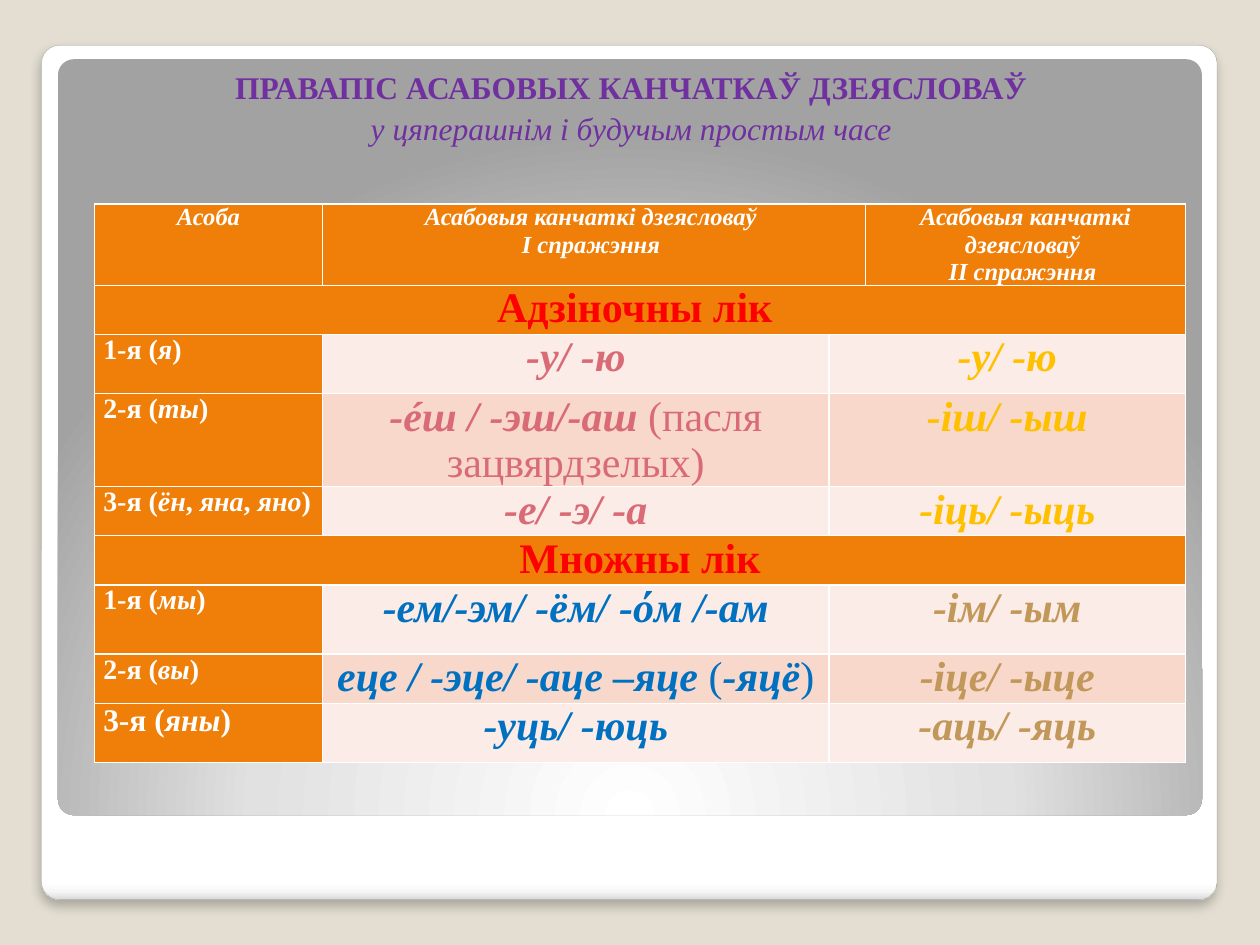
"""Build a slide with a table of Belarusian verb endings."""
from pptx import Presentation
from pptx import util as u
from pptx.dml.color import RGBColor
from pptx.enum import shapes, text
from pptx.oxml import parse_xml
from pptx.oxml.ns import nsdecls, qn

WIDE, HIGH = 10, 7.5
FONT = "Times New Roman"
HUES = {
    "page": "E3DED1", "edge": "A4A4A4", "white": "FFFFFF", "title": "7030A0",
    "head": "F07F09", "light": "FCECE7", "dark": "F9D8CC", "red": "FF0000",
    "rose": "D96B77", "gold": "FFC000", "blue": "0070C0", "tan": "C19859",
}
COLS = [1.81, 4.02, 0.29, 2.54]
ROWS = [0.39, 0.39, 0.47, 0.47, 0.39, 0.39, 0.55, 0.39, 0.47]
HEADS = [
    (0, "Асоба"),
    (1, "Асабовыя канчаткі дзеясловаў \nI спражэння "),
    (3, "Асабовыя канчаткі дзеясловаў \nII спражэння "),
]
PARTS = [
    ("Адзіночны лік ", "rose", "gold", [
        ("1-я (*я*)", 16, "-у/ -ю", "-у/ -ю"),
        ("2-я (*ты*)", 16, "-éш / -эш/-аш* (пасля зацвярдзелых)*", "-іш/ -ыш"),
        ("3-я (*ён*, *яна*, *яно*)", 16, "-е/ -э/ -а", "-іць/ -ыць"),
    ]),
    ("Множны лік", "blue", "tan", [
        ("1-я (*мы*)", 16, "-ем/-эм/ -ём/ -όм /-ам", "-ім/ -ым"),
        ("2-я (*вы*)", 16, "еце / -эце/ -аце –яце *(*-яцё*)*", "-іце/ -ыце"),
        ("3-я (*яны*)", 18, "-уць/ -юць", "-аць/ -яць"),
    ]),
]
PANEL = [(0, "FFFFFF"), (98, "FFFFFF"), (99, "F7F7F7"), (100, "DADADA")]
GLOW = [(0, "FFFFFF"), (55, "E1E1E1"), (100, "A2A2A2")]
DOWN = '<a:lin ang="5400000" scaled="0"/>'
ROUND = ('<a:path path="circle"><a:fillToRect l="50000" t="175000" '
         'r="50000" b="-75000"/></a:path>')
SHADE = ('<a:outerShdw %s blurRad="76200" dist="50800" dir="5400000" algn="t" '
         'rotWithShape="0"><a:srgbClr val="000000"><a:alpha val="25000"/>'
         '</a:srgbClr></a:outerShdw>' % nsdecls("a"))


def hue(name):
    """Return a named colour."""
    return RGBColor.from_string(HUES[name])


def write(par, words, size, color, bold=True, ital=False, alt=None,
          align=text.PP_ALIGN.CENTER):
    """Fill a paragraph; parts between stars take the alt bold and italic."""
    par.alignment = align
    for i, part in enumerate(words.split("*")):
        if part:
            run = par.add_run()
            run.text = part
            font = run.font
            font.name, font.size = FONT, u.Pt(size)
            font.color.rgb = hue(color)
            font.bold, font.italic = alt if i % 2 else (bold, ital)


def plate(slide, box, stops, shape_of):
    """Add a rounded plate with a gradient fill."""
    item = slide.shapes.add_shape(shapes.MSO_SHAPE.ROUNDED_RECTANGLE,
                                  *map(u.Inches, box))
    item.adjustments[0] = 0.021
    item.shadow.inherit = False
    item.line.fill.background()
    item.fill.background()
    marks = "".join(f'<a:gs pos="{at * 1000}"><a:srgbClr val="{code}"/></a:gs>'
                    for at, code in stops)
    props = item._element.spPr
    props.replace(props.find(qn("a:noFill")), parse_xml(
        f'<a:gradFill {nsdecls("a")} rotWithShape="1"><a:gsLst>{marks}</a:gsLst>'
        f'{shape_of}</a:gradFill>'))
    return item


def frame(slide):
    """Draw the white panel and the grey glow inside it."""
    panel = plate(slide, (0.33, 0.36, 9.33, 6.78), PANEL, DOWN)
    panel.line.color.rgb = hue("edge")
    panel.line.width = u.Pt(0.16)
    panel._element.spPr.find(qn("a:effectLst")).append(parse_xml(SHADE))
    plate(slide, (0.46, 0.47, 9.08, 6), GLOW, ROUND)


def heading(slide):
    """Place and format the title in front of the frame."""
    title = slide.shapes.title
    slide.shapes._spTree.append(title._element)
    title.left, title.top = u.Inches(0.51), u.Inches(0.52)
    title.width, title.height = u.Inches(9), u.Inches(0.94)
    body = title.text_frame
    body.vertical_anchor = text.MSO_ANCHOR.TOP
    body.auto_size = text.MSO_AUTO_SIZE.NONE
    body.margin_top = 0
    first, second = body.paragraphs[0], body.add_paragraph()
    write(first, "ПРАВАПІС АСАБОВЫХ КАНЧАТКАЎ ДЗЕЯСЛОВАЎ", 18, "title")
    write(second, "у цяперашнім і будучым простым часе", 18, "title",
          bold=False, ital=True)
    for par in (first, second):
        par.line_spacing = 1.07
        par.space_before = u.Pt(0)


def fill(cell, words, back, **form):
    """Colour a cell and write its lines."""
    cell.fill.solid()
    cell.fill.fore_color.rgb = hue(back)
    cell.margin_left = cell.margin_right = u.Inches(0.07)
    cell.margin_top = cell.margin_bottom = 0
    body = cell.text_frame
    for i, line in enumerate(words.split("\n")):
        write(body.add_paragraph() if i else body.paragraphs[0], line, **form)


def chart(slide):
    """Add the table of endings."""
    grid = slide.shapes.add_table(
        len(ROWS), len(COLS), u.Inches(0.75), u.Inches(1.62),
        u.Inches(sum(COLS)), u.Inches(sum(ROWS))).table
    for col, wide in zip(grid.columns, COLS):
        col.width = u.Inches(wide)
    for row, high in zip(grid.rows, ROWS):
        row.height = u.Inches(high)
    grid.cell(0, 1).merge(grid.cell(0, 2))
    for col, words in HEADS:
        fill(grid.cell(0, col), words, "head", size=14, color="white", ital=True)
    top = 1
    for name, left, right, lines in PARTS:
        grid.cell(top, 0).merge(grid.cell(top, 3))
        fill(grid.cell(top, 0), name, "head", size=24, color="red")
        for row, (who, size, one, two) in enumerate(lines, top + 1):
            grid.cell(row, 2).merge(grid.cell(row, 3))
            fill(grid.cell(row, 0), who, "head", size=size, color="white",
                 alt=(True, True), align=text.PP_ALIGN.LEFT)
            back = "dark" if (row - top) % 2 == 0 else "light"
            for col, words, color in ((1, one, left), (2, two, right)):
                fill(grid.cell(row, col), words, back, size=24, color=color,
                     ital=True, alt=(False, False))
        top += len(lines) + 1


def main():
    """Build and save the slide."""
    deck = Presentation()
    deck.slide_width, deck.slide_height = u.Inches(WIDE), u.Inches(HIGH)
    slide = deck.slides.add_slide(deck.slide_layouts[5])
    slide.background.fill.solid()
    slide.background.fill.fore_color.rgb = hue("page")
    frame(slide)
    heading(slide)
    chart(slide)
    deck.save("out.pptx")


if __name__ == "__main__":
    main()
